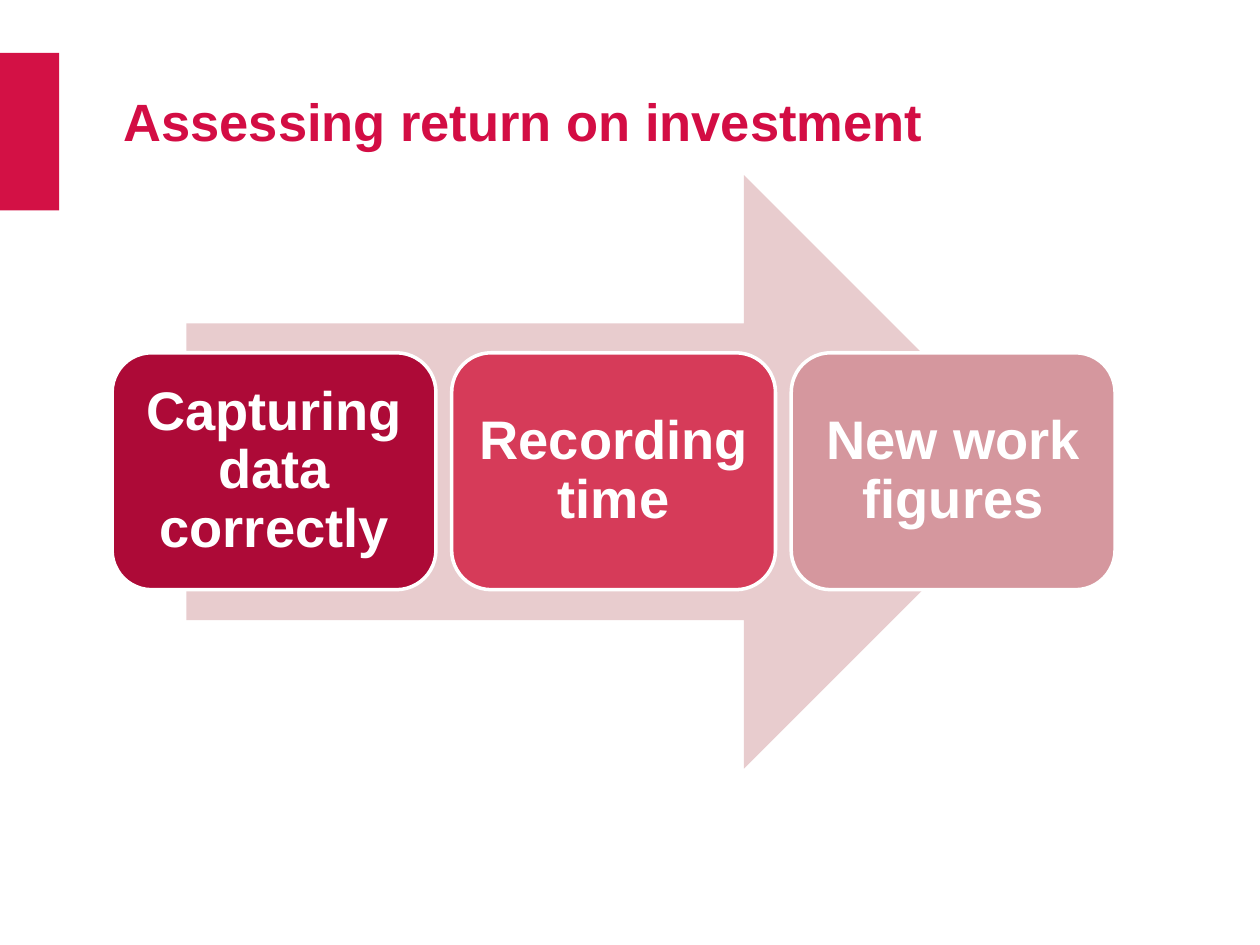
from dataclasses import dataclass

from lxml import etree
from pptx import Presentation
from pptx.dml.color import RGBColor
from pptx.enum import shapes, text
from pptx.oxml.ns import qn
from pptx.util import Inches, Pt

WHITE = RGBColor(0xFF, 0xFF, 0xFF)
ACCENT = RGBColor(0xD3, 0x11, 0x45)
TITLE_RED = RGBColor(0xD3, 0x0D, 0x44)
ARROW_PINK = RGBColor(0xE8, 0xCC, 0xCE)
DARK_RED = RGBColor(0xAD, 0x0A, 0x37)
MID_RED = RGBColor(0xD6, 0x3B, 0x59)
SOFT_RED = RGBColor(0xD5, 0x97, 0x9E)

STEP_LEFT, STEP_TOP = 0.89, 2.8
STEP_WIDTH, STEP_HEIGHT = 2.57, 1.88
STEP_PITCH = 2.695


@dataclass
class Step:
    label: str
    fill: RGBColor


STEPS = [
    Step("Capturing data correctly", DARK_RED),
    Step("Recording time", MID_RED),
    Step("New work figures", SOFT_RED),
]


def add_block(s, kind, left: float, top: float, width: float, height: float,
              fill: RGBColor, line: RGBColor | None = None):
    sp = s.shapes.add_shape(kind, Inches(left), Inches(top), Inches(width), Inches(height))
    sp.shadow.inherit = False
    sp.fill.solid()
    sp.fill.fore_color.rgb = fill
    if line is None:
        sp.line.fill.background()
    else:
        sp.line.color.rgb = line
        sp.line.width = Pt(2)
    return sp


def write_text(sp, content: str, *, size: float, color: RGBColor, align, anchor,
               spacing: float, inset_x: float, inset_y: float) -> None:
    tf = sp.text_frame
    tf.word_wrap = True
    tf.vertical_anchor = anchor
    tf.margin_left = tf.margin_right = Inches(inset_x)
    tf.margin_top = tf.margin_bottom = Inches(inset_y)
    p = tf.paragraphs[0]
    p.alignment = align
    p.line_spacing = spacing
    r = p.add_run()
    r.text = content
    r.font.name = "Arial"
    r.font.size = Pt(size)
    r.font.bold = True
    r.font.color.rgb = color


def add_title(s, content: str) -> None:
    title = s.shapes.title
    title.left, title.top = Inches(0.88), Inches(0.75)
    title.width, title.height = Inches(8.7), Inches(0.5)
    write_text(title, content, size=30, color=TITLE_RED, align=text.PP_ALIGN.LEFT,
               anchor=text.MSO_ANCHOR.BOTTOM, spacing=0.8, inset_x=0.1, inset_y=0.05)
    title.text_frame.auto_size = text.MSO_AUTO_SIZE.SHAPE_TO_FIT_TEXT


def add_step(s, index: int, step: Step) -> None:
    sp = add_block(s, shapes.MSO_SHAPE.ROUNDED_RECTANGLE, STEP_LEFT + index * STEP_PITCH,
                   STEP_TOP, STEP_WIDTH, STEP_HEIGHT, step.fill, WHITE)
    write_text(sp, step.label, size=31, color=WHITE, align=text.PP_ALIGN.CENTER,
               anchor=text.MSO_ANCHOR.MIDDLE, spacing=0.9, inset_x=0.13, inset_y=0.13)
    # Space after as a share of the line height has no public setter
    p_pr = sp.text_frame.paragraphs[0]._p.get_or_add_pPr()
    after = etree.SubElement(p_pr, qn("a:spcAft"))
    etree.SubElement(after, qn("a:spcPct"), val="35000")


def main() -> None:
    prs = Presentation()
    prs.slide_width, prs.slide_height = Inches(10), Inches(7.5)
    s = prs.slides.add_slide(prs.slide_layouts[5])
    add_block(s, shapes.MSO_SHAPE.RECTANGLE, 0, 0.42, 0.47, 1.25, ACCENT)
    add_title(s, "Assessing return on investment")
    add_block(s, shapes.MSO_SHAPE.RIGHT_ARROW, 1.48, 1.39, 6.78, 4.71, ARROW_PINK)
    for index, step in enumerate(STEPS):
        add_step(s, index, step)
    prs.save("out.pptx")


if __name__ == "__main__":
    main()
